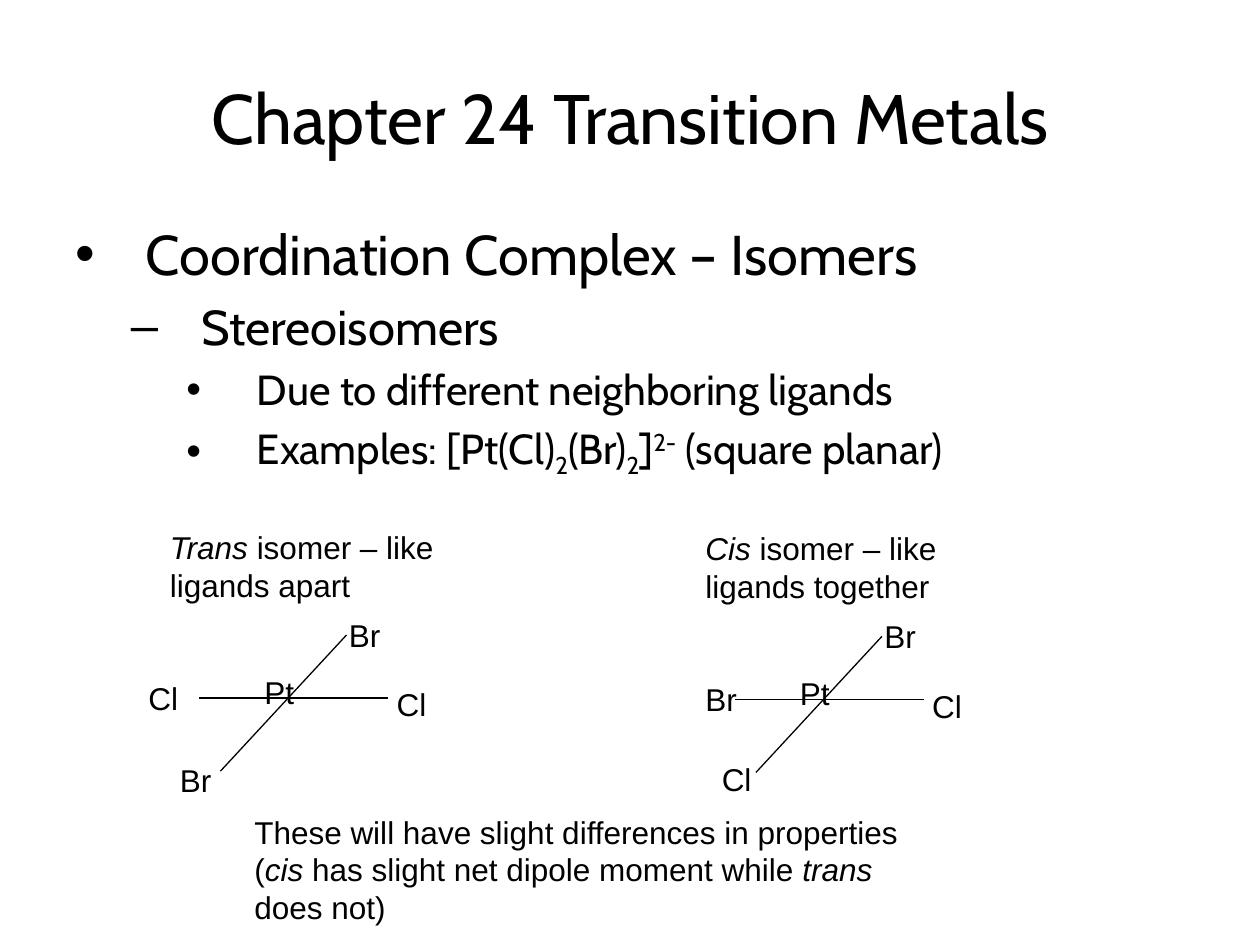
from lxml.etree import SubElement
from pptx import Presentation
from pptx.dml.color import RGBColor
from pptx.enum.shapes import MSO_CONNECTOR
from pptx.enum.text import MSO_ANCHOR, MSO_AUTO_SIZE, PP_ALIGN
from pptx.oxml.ns import qn
from pptx.util import Inches, Pt

BLACK = RGBColor(0, 0, 0)
HEADING_FONT, LABEL_FONT = "Cabin", "Arial"
BASELINES = {"sub": "-25000", "sup": "30000"}

TITLE = "Chapter 24 Transition Metals"
OUTLINE = [
    (0, [("Coordination Complex – Isomers", "")]),
    (1, [("Stereoisomers", "")]),
    (2, [("Due to different neighboring ligands", "")]),
    (2, [("Examples: [Pt(Cl)", ""), ("2", "sub"), ("(Br)", ""), ("2", "sub"),
         ("]", ""), ("2-", "sup"), (" (square planar)", "")]),
]
LEVELS = [("•", 32, 0.56), ("–", 28, 1.0), ("•", 24, 1.44)]
HANGING = 0.56

ISOMERS = [
    {"origin": (1.08, 4.14),
     "caption": [("Trans", "italic"), (" isomer – like ligands apart", "")],
     "ligands": [("Br", 1.59, 0.7, 0.83), ("Cl", 1.97, 1.25, 0.67),
                 ("Cl", 0, 1.2, 0.58), ("Br", 0.25, 1.85, 0.83)]},
    {"origin": (5.33, 4.15),
     "caption": [("Cis", "italic"), (" isomer – like ligands together", "")],
     "ligands": [("Br", 1.59, 0.7, 0.83), ("Cl", 1.97, 1.25, 0.67),
                 ("Br", 0.17, 1.2, 0.83), ("Cl", 0.3, 1.83, 0.58)]},
]
BONDS = [((2.0, 1.4), (0.5, 1.4)), ((1.67, 0.9), (0.67, 1.98))]
CENTER = ("Pt", 0.92, 1.15, 0.75)
CONCLUSION = [
    ("These will have slight differences in properties (", ""), ("cis", "italic"),
    (" has slight net dipole moment while ", ""), ("trans", "italic"),
    (" does not)", ""),
]


def write(paragraph, pieces, font=LABEL_FONT, size=18):
    for text, style in pieces:
        run = paragraph.add_run()
        run.text = text
        run.font.name = font
        run.font.size = Pt(size)
        run.font.color.rgb = BLACK
        if style == "italic":
            run.font.italic = True
        elif style in BASELINES:
            run.font._element.set("baseline", BASELINES[style])


def add_frame(slide, left, top, width, height):
    box = slide.shapes.add_textbox(*map(Inches, (left, top, width, height)))
    box.text_frame.word_wrap = True
    return box.text_frame


def add_label(slide, pieces, left, top, width, height=0.4):
    write(add_frame(slide, left, top, width, height).paragraphs[0], pieces)


def add_title(slide):
    title = slide.shapes.title
    title.left, title.top, title.width, title.height = map(Inches, (0.5, 0.3, 9, 1.25))
    frame = title.text_frame
    frame.auto_size = MSO_AUTO_SIZE.NONE
    frame.vertical_anchor = MSO_ANCHOR.MIDDLE
    frame.paragraphs[0].alignment = PP_ALIGN.CENTER
    write(frame.paragraphs[0], [(TITLE, "")], font=HEADING_FONT, size=40)


def add_outline(slide):
    frame = add_frame(slide, 0.5, 1.69, 9, 3.14)
    for index, (level, pieces) in enumerate(OUTLINE):
        bullet, size, indent = LEVELS[level]
        paragraph = frame.add_paragraph() if index else frame.paragraphs[0]
        paragraph.level = level
        properties = paragraph._p.get_or_add_pPr()
        properties.set("marL", str(Inches(indent)))
        properties.set("indent", str(Inches(-HANGING)))
        SubElement(properties, qn("a:buFont")).set("typeface", LABEL_FONT)
        SubElement(properties, qn("a:buChar")).set("char", bullet)
        if index:
            paragraph.space_before = Pt(0.2 * size)
        write(paragraph, pieces, font=HEADING_FONT, size=size)


def add_isomer(slide, isomer):
    x, y = isomer["origin"]
    for (x1, y1), (x2, y2) in BONDS:
        bond = slide.shapes.add_connector(
            MSO_CONNECTOR.STRAIGHT, *map(Inches, (x + x1, y + y1, x + x2, y + y2)))
        bond.line.color.rgb = BLACK
        bond.line.width = Pt(0.75)
        SubElement(bond._element.spPr, qn("a:effectLst"))
    for atom, dx, dy, width in [CENTER] + isomer["ligands"]:
        add_label(slide, [(atom, "")], x + dx, y + dy, width)
    add_label(slide, isomer["caption"], x + 0.17, y, 2.46, 0.71)


def main():
    deck = Presentation()
    deck.slide_width, deck.slide_height = Inches(10), Inches(7.5)
    slide = deck.slides.add_slide(deck.slide_layouts[5])
    add_title(slide)
    add_outline(slide)
    for isomer in ISOMERS:
        add_isomer(slide, isomer)
    add_label(slide, CONCLUSION, 1.92, 6.4, 5.71, 1.01)
    deck.save("out.pptx")


if __name__ == "__main__":
    main()
